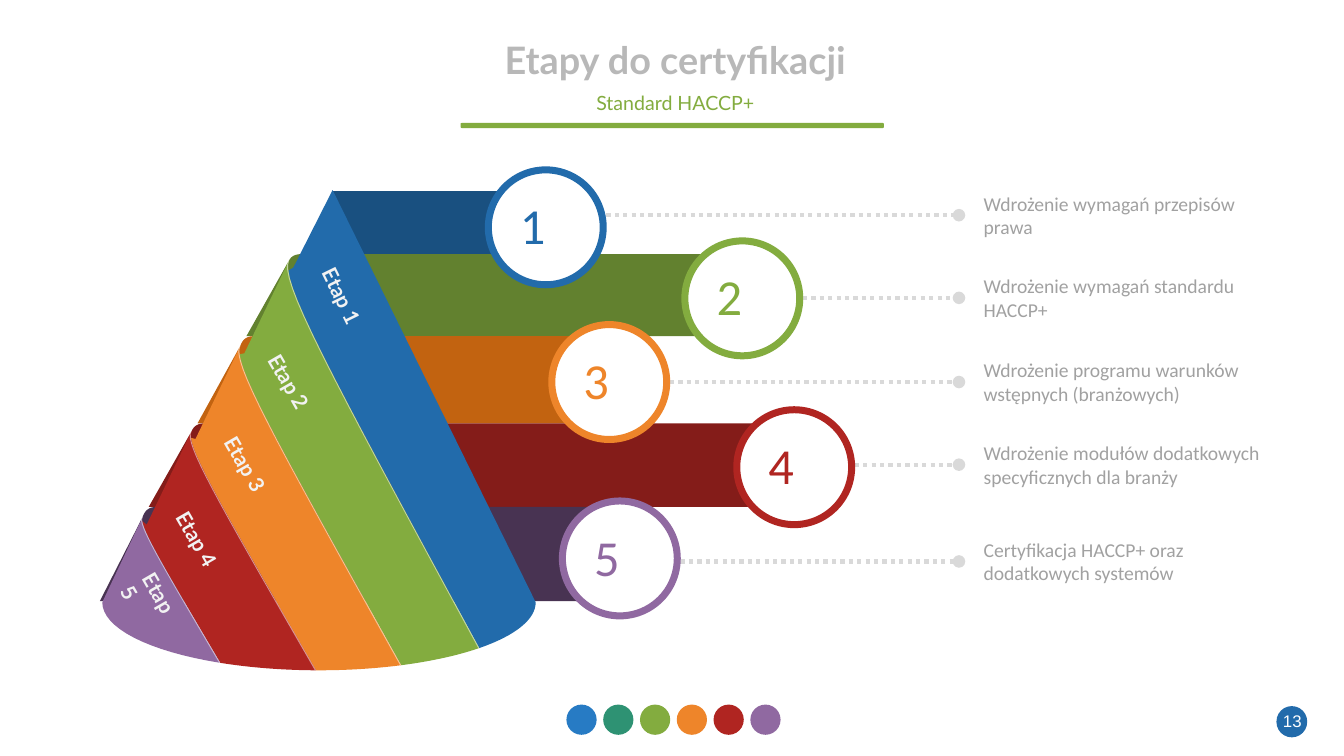
from dataclasses import dataclass
from math import acos, cos, sin

from lxml import etree
from pptx import Presentation
from pptx.dml.color import RGBColor
from pptx.enum.dml import MSO_LINE
from pptx.enum.shapes import MSO_CONNECTOR, MSO_SHAPE
from pptx.enum.text import MSO_ANCHOR, PP_ALIGN
from pptx.oxml.ns import qn
from pptx.util import Cm, Pt

ROUND_RECT, OVAL = MSO_SHAPE.ROUNDED_RECTANGLE, MSO_SHAPE.OVAL
STRAIGHT, DOTTED = MSO_CONNECTOR.STRAIGHT, MSO_LINE.ROUND_DOT
LEFT, CENTER = PP_ALIGN.LEFT, PP_ALIGN.CENTER
TOP, MIDDLE = MSO_ANCHOR.TOP, MSO_ANCHOR.MIDDLE

UNIT = 2.54  # cm per layout unit
STEPS = 16   # segments per curve
BLUE, GREEN, ORANGE, RED, PURPLE = "226BAB", "83AC3F", "EE852A", "B02521", "9069A1"
WHITE = "FFFFFF"

APEX = (6.6, 3.77)
BASE_X, BASE_Y, BASE_RX, BASE_RY = 6.33, 11.95, 4.3, 1.35
BASE_CUTS = [10.63, 9.51, 7.96, 6.27, 4.37, 2.03]
BAR_TOPS = [3.79, 5.04, 6.67, 8.4, 10.06, 11.93]
CIRCLE = 2.28

# colour, dark, circle left/top, label left/top/width/rotation, leader y, text
STAGES = [
    (BLUE, "195080", (9.69, 3.37), (5.18, 7.02, 4.62, 63.9), 4.27,
     "Wdrożenie wymagań przepisów prawa"),
    (GREEN, "62812F", (13.59, 4.78), (4.18, 8.76, 4.82, 60), 5.91,
     "Wdrożenie wymagań standardu HACCP+"),
    (ORANGE, "C26310", (10.95, 6.44), (3.52, 10.04, 4, 60), 7.58,
     "Wdrożenie programu warunków wstępnych (branżowych)"),
    (RED, "841C19", (14.62, 8.13), (2.72, 11.26, 3.36, 60), 9.22,
     "Wdrożenie modułów dodatkowych specyficznych dla branży"),
    (PURPLE, "483352", (11.16, 9.94), (2.55, 11.61, 1.37, 60), 11.14,
     "Certyfikacja HACCP+ oraz dodatkowych systemów"),
]


def u(value):
    """Length of a number of layout units."""
    return Cm(value * UNIT)


def rgb(value):
    return RGBColor.from_string(value)


def bezier(*controls):
    """Points along a cubic curve."""
    points = []
    for i in range(STEPS + 1):
        t = i / STEPS
        weights = ((1 - t) ** 3, 3 * t * (1 - t) ** 2, 3 * t * t * (1 - t), t ** 3)
        points.append(tuple(sum(w * pt[axis] for w, pt in zip(weights, controls))
                            for axis in (0, 1)))
    return points


def base_arc(x1, x2):
    """Points along the cone's rounded base from x1 to x2."""
    a, b = (acos(max(-1, min(1, (x - BASE_X) / BASE_RX))) for x in (x1, x2))
    angles = [a + (b - a) * i / STEPS for i in range(STEPS + 1)]
    return [(BASE_X + BASE_RX * cos(t), BASE_Y + BASE_RY * sin(t)) for t in angles]


def strip_top(i):
    return (5.74 - 0.97 * (i - 1), 5.16 + 1.7 * (i - 1)) if i else APEX


def strip_edge(i):
    """Upper edge of a strip, from the left side of the cone to its base."""
    start, end = strip_top(i), base_arc(BASE_CUTS[i], BASE_CUTS[i])[0]
    if i == 0:
        return [start, end]
    w, h = end[0] - start[0], end[1] - start[1]
    return bezier(start, (start[0] - 0.05 * w, start[1] + 0.05 * h),
                  (end[0] - 0.82 * w, end[1] - 0.74 * h), end)


def strip_outline(i):
    points = strip_edge(i) + base_arc(BASE_CUTS[i], BASE_CUTS[i + 1])
    if i + 1 < len(STAGES):
        x, y = strip_top(i + 1)
        points += strip_edge(i + 1)[:1:-1] + [(x + 0.08, y + 0.15)]
    return points


def bar_outline(i, right):
    x, y = strip_top(i)
    top, bottom = BAR_TOPS[i:i + 2]
    if i == 0:
        return [(x, top), (right, top), (right, bottom), (x + 0.6, bottom)]
    corner = bezier((x, y), (x + 0.07, top), (x + 0.2, top), (x + 0.3, top))
    return corner + [(right, top), (right, bottom), (x - 0.85, bottom)]


@dataclass
class Canvas:
    slide: object
    heading_font: str = "Lato"
    body_font: str = "Calibri"
    grey: str = "A1A1A1"
    leader_color: str = "D9D9D9"

    def paint(self, sp, fill, line=None, alpha=None):
        sp.shadow.inherit = False
        sp.fill.solid()
        sp.fill.fore_color.rgb = rgb(fill)
        if alpha:
            clr = sp._element.spPr.find(".//" + qn("a:srgbClr"))
            etree.SubElement(clr, qn("a:alpha"), val=str(alpha * 1000))
        if line:
            sp.line.color.rgb = rgb(line)
            sp.line.width = Pt(10)
        else:
            sp.line.fill.background()

    def shape(self, kind, x, y, w, h, fill, line=None, adj=None):
        sp = self.slide.shapes.add_shape(kind, u(x), u(y), u(w), u(h))
        if adj is not None:
            sp.adjustments[0] = adj
        self.paint(sp, fill, line)

    def freeform(self, outline, fill, alpha=None):
        points = [(u(x), u(y)) for x, y in outline]
        builder = self.slide.shapes.build_freeform(*points[0])
        builder.add_line_segments(points[1:], close=True)
        self.paint(builder.convert_to_shape(), fill, alpha=alpha)

    def leader(self, x1, x2, y):
        """Dotted horizontal line with round ends."""
        line = self.slide.shapes.add_connector(STRAIGHT, u(x1), u(y), u(x2), u(y))
        line.line.color.rgb = rgb(self.leader_color)
        line.line.width = Pt(6)
        line.line.dash_style = DOTTED
        props = line._element.spPr
        for end in ("a:headEnd", "a:tailEnd"):
            etree.SubElement(props.find(qn("a:ln")), qn(end), type="oval")
        etree.SubElement(props, qn("a:effectLst"))

    def text(self, text, x, y, w, h, size, color, font, bold=False, align=LEFT,
             anchor=TOP, insets=(0.1, 0.05), wrap=True, rotation=0):
        sp = self.slide.shapes.add_textbox(u(x), u(y), u(w), u(h))
        sp.rotation = rotation
        tf = sp.text_frame
        tf.word_wrap = wrap
        tf.vertical_anchor = anchor
        tf.margin_left = tf.margin_right = u(insets[0])
        tf.margin_top = tf.margin_bottom = u(insets[1])
        tf.text = text
        p = tf.paragraphs[0]
        p.alignment = align
        r = p.runs[0]
        r.font.size, r.font.name, r.font.bold = Pt(size), font, bold
        r.font.color.rgb = rgb(color)


def main():
    prs = Presentation()
    prs.slide_width, prs.slide_height = u(26.67), u(15)
    c = Canvas(prs.slides.add_slide(prs.slide_layouts[6]))

    c.shape(ROUND_RECT, 25.33, 14.01, 0.61, 0.62, BLUE, adj=0.5)
    c.text("13", 25.43, 13.99, 0.43, 0.64, 24, WHITE, "Arial", align=CENTER,
           anchor=MIDDLE, insets=(0, 0), wrap=False)
    for i, color in enumerate(("277BC4", "2E9273", GREEN, ORANGE, RED, PURPLE)):
        c.shape(ROUND_RECT, 11.24 + 0.73 * i, 13.98, 0.6, 0.6, color, adj=0.5)
    c.shape(ROUND_RECT, 9.14, 2.44, 8.4, 0.1, GREEN, adj=0.22)
    for text, y, h, size, color, bold in (
            ("Etapy do certyfikacji", 0.71, 0.94, 54, "B8B8B8", True),
            ("Standard HACCP+", 1.78, 0.5, 28, GREEN, False)):
        c.text(text, 1.68, y, 23.44, h, size, color, c.heading_font, bold,
               CENTER, MIDDLE, (0, 0.11))

    for i, (_, dark, (x, _), _, leader_y, _) in enumerate(STAGES):
        c.leader(x + 1.4, 19.03, leader_y)
        c.freeform(bar_outline(i, x + CIRCLE / 2), dark)
    for color, _, (x, y), *_ in STAGES:
        c.shape(OVAL, x, y, CIRCLE, CIRCLE, WHITE, line=color)
    for i, (color, *_) in enumerate(STAGES):
        c.freeform(strip_outline(i), color)
    for i in range(1, len(STAGES)):
        edge = strip_edge(i)
        c.freeform(edge + [(x - 0.02, y) for x, y in reversed(edge)], WHITE, alpha=50)

    for number, (color, _, circle, label, leader_y, text) in enumerate(STAGES, 1):
        x, y, w, rotation = label
        c.text(f"Etap {number}", x, y, w, 0.61, 30, "F2F2F2", c.heading_font,
               bold=True, rotation=rotation)
        c.text(str(number), circle[0] + 0.53, circle[1] + 0.44, 0.71, 1.31, 72,
               color, c.body_font, wrap=False)
        c.text(text, 19.42, leader_y - 0.52, 5.69, 1.04, 28, c.grey, c.body_font)
    prs.save("out.pptx")


if __name__ == "__main__":
    main()
